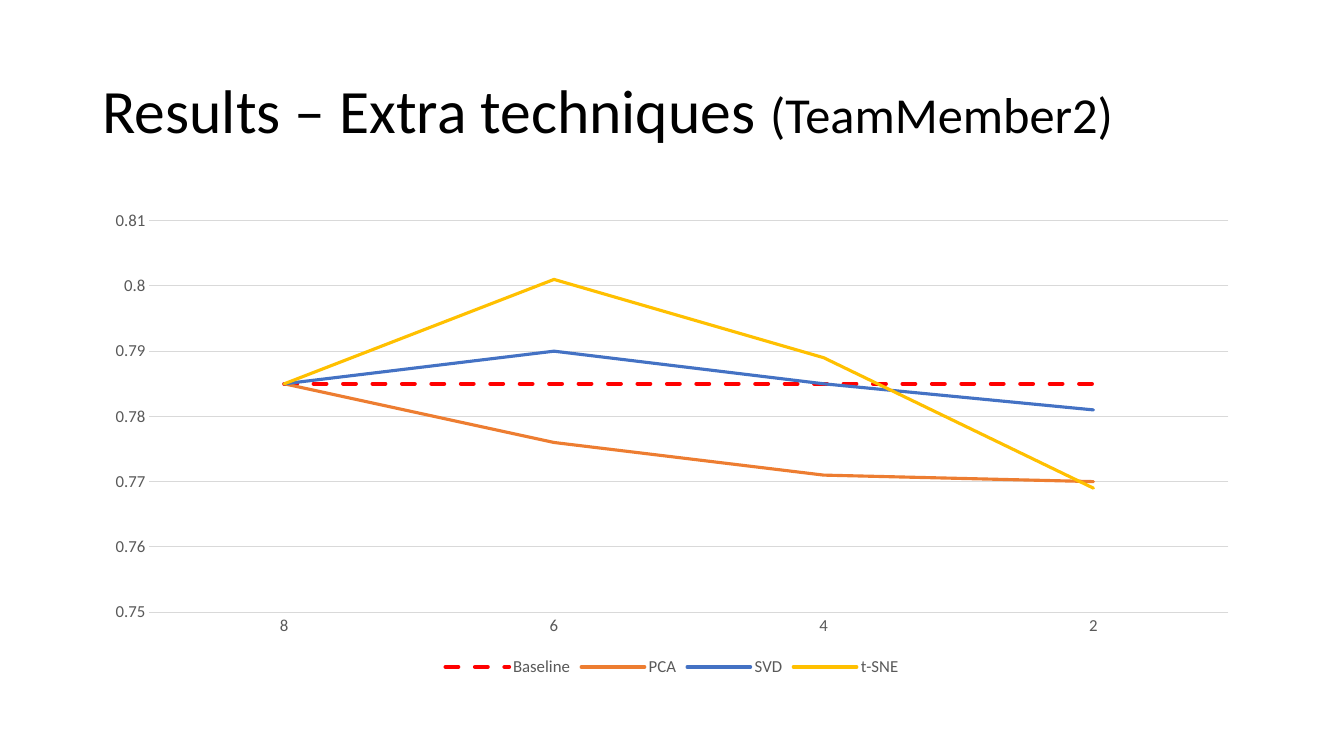
from dataclasses import dataclass

from pptx import Presentation
from pptx import util as u
from pptx.chart.data import CategoryChartData
from pptx.dml.color import RGBColor
from pptx.enum import chart as ch, dml, text

# Content
TITLE = [("Results – Extra techniques ", 44), ("(TeamMember2)", 36)]
COMPONENTS = ["8", "6", "4", "2"]
# name, values, colour, line width, dash
SERIES = [
    ("Baseline", [0.785] * 4, "FF0000", 3, dml.MSO_LINE.DASH),
    ("PCA", [0.785, 0.776, 0.771, 0.77], "ED7D31", 2.25, None),
    ("SVD", [0.785, 0.79, 0.785, 0.781], "4472C4", 2.25, None),
    ("t-SNE", [0.785, 0.801, 0.789, 0.769], "FFC000", 2.25, None),
]


@dataclass(frozen=True)
class Theme:
    font: str = "Calibri"
    title: str = "000000"
    label: str = "595959"
    grid: str = "D9D9D9"
    label_size: int = 12
    hairline: float = 0.75


THEME = Theme()
SLIDE_W, SLIDE_H = 33.87, 19.05
MARGIN = 2.33
CONTENT_W = SLIDE_W - 2 * MARGIN
TITLE_TOP, TITLE_H = 1.01, 3.68
CHART_TOP, CHART_H = 5.07, 12.09


def set_font(font, size, color):
    font.name = THEME.font
    font.size = u.Pt(size)
    font.color.rgb = RGBColor.from_string(color)


def set_line(line, color, width):
    line.color.rgb = RGBColor.from_string(color)
    line.width = u.Pt(width)


def place(left, top, width, height):
    return [u.Cm(value) for value in (left, top, width, height)]


def add_title(page):
    box = page.shapes.title
    box.left, box.top, box.width, box.height = place(
        MARGIN, TITLE_TOP, CONTENT_W, TITLE_H)
    frame = box.text_frame
    frame.word_wrap = True
    frame.auto_size = text.MSO_AUTO_SIZE.NONE
    frame.vertical_anchor = text.MSO_ANCHOR.MIDDLE
    para = frame.paragraphs[0]
    para.alignment = text.PP_ALIGN.LEFT
    para.line_spacing = 0.9
    for words, size in TITLE:
        span = para.add_run()
        span.text = words
        set_font(span.font, size, THEME.title)


def add_results_chart(page):
    data = CategoryChartData()
    data.categories = COMPONENTS
    for name, values, *_ in SERIES:
        data.add_series(name, values)
    chart = page.shapes.add_chart(
        ch.XL_CHART_TYPE.LINE,
        *place(MARGIN, CHART_TOP, CONTENT_W, CHART_H), data).chart
    chart.has_title = False
    set_font(chart.font, THEME.label_size, THEME.label)

    # Legend
    chart.has_legend = True
    chart.legend.position = ch.XL_LEGEND_POSITION.BOTTOM
    chart.legend.include_in_layout = False
    set_font(chart.legend.font, THEME.label_size, THEME.label)

    # Axes
    for axis in (chart.category_axis, chart.value_axis):
        axis.major_tick_mark = axis.minor_tick_mark = ch.XL_TICK_MARK.NONE
        set_font(axis.tick_labels.font, THEME.label_size, THEME.label)
    set_line(chart.category_axis.format.line, THEME.grid, THEME.hairline)
    scores = chart.value_axis
    scores.minimum_scale, scores.maximum_scale = 0.75, 0.81
    scores.major_unit = 0.01
    scores.tick_labels.number_format = "General"
    scores.tick_labels.number_format_is_linked = False
    scores.format.line.fill.background()
    scores.has_major_gridlines = True
    set_line(scores.major_gridlines.format.line, THEME.grid, THEME.hairline)

    # Lines
    plot = chart.plots[0]
    plot.vary_by_categories = False
    for series, (_, _, color, width, dash) in zip(plot.series, SERIES):
        series.smooth = False
        series.marker.style = ch.XL_MARKER_STYLE.NONE
        line = series.format.line
        set_line(line, color, width)
        if dash:
            line.dash_style = dash
        series.format.line.fill  # ensures the outline element exists
        for outline in series._element.xpath("c:spPr/a:ln"):
            outline.set("cap", "rnd")


def main():
    deck = Presentation()
    deck.slide_width, deck.slide_height = u.Cm(SLIDE_W), u.Cm(SLIDE_H)
    page = deck.slides.add_slide(deck.slide_layouts.get_by_name("Title Only"))
    add_title(page)
    add_results_chart(page)
    deck.save("out.pptx")


if __name__ == "__main__":
    main()
